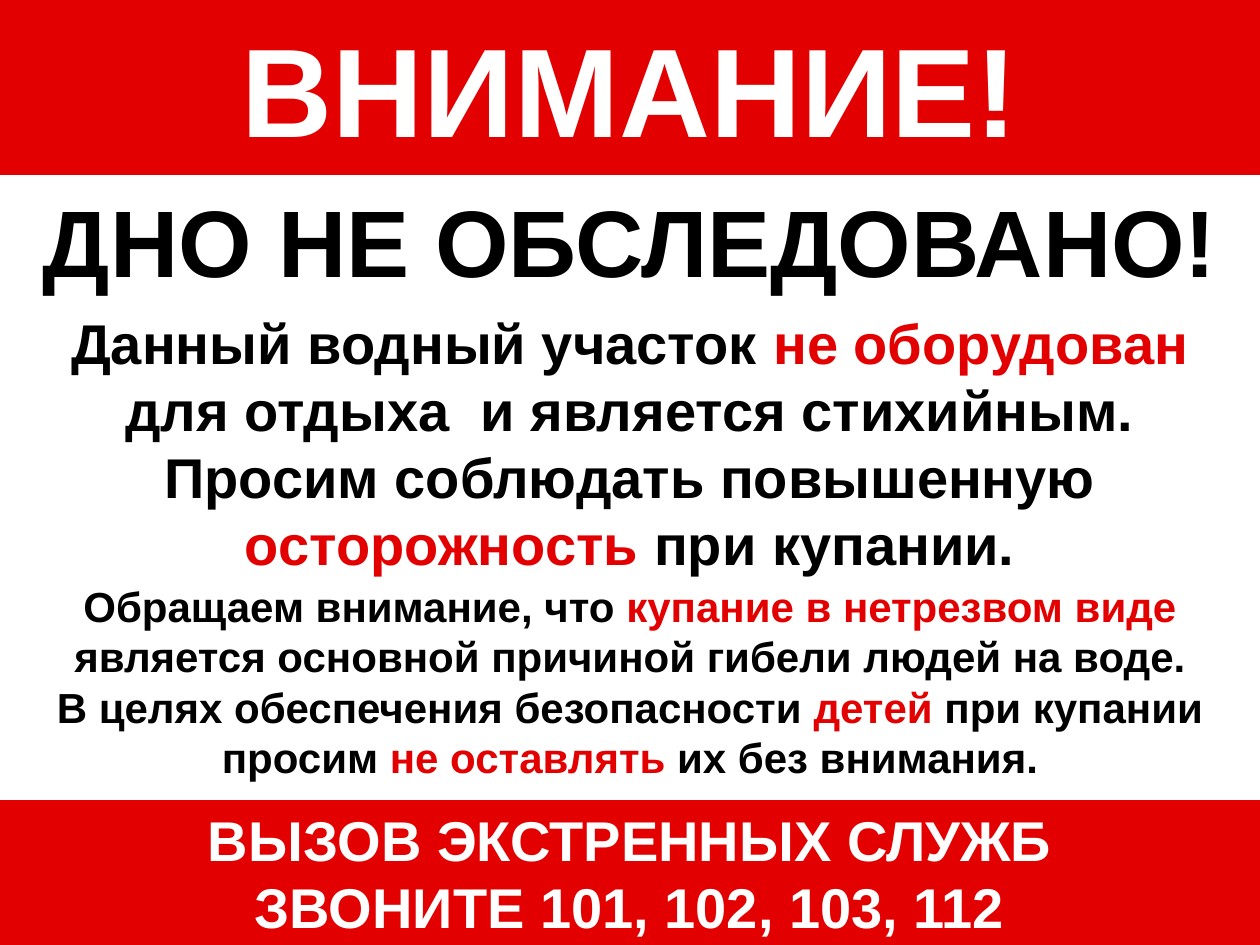
from pptx import Presentation
from pptx.dml.color import RGBColor
from pptx.enum.shapes import MSO_SHAPE as Shape
from pptx.enum.text import MSO_ANCHOR as Anchor, MSO_AUTO_SIZE as AutoSize, PP_ALIGN as Align
from pptx.util import Emu, Pt

PX = 914400 / 126
WIDTH, HEIGHT = 1260, 945
COLORS = {"red": "E20000", "black": "000000", "white": "FFFFFF"}

WARNING = [[
    ("Данный водный участок ", "black"),
    ("не оборудован ", "red"),
    ("для отдыха  и является стихийным. Просим соблюдать повышенную ", "black"),
    ("осторожность", "red"),
    (" при купании.", "black"),
]]
ADVICE = [
    [("Обращаем внимание, что ", "black"),
     ("купание в нетрезвом виде ", "red"),
     ("является основной причиной гибели людей на воде.", "black")],
    [("В целях обеспечения безопасности ", "black"),
     ("детей ", "red"),
     ("при купании", "black")],
    [("просим ", "black"),
     ("не оставлять ", "red"),
     ("их без внимания.", "black")],
]
CONTACTS = [
    [("ВЫЗОВ ЭКСТРЕННЫХ СЛУЖБ", "white")],
    [("ЗВОНИТЕ 101, 102, 103, 112", "white")],
]


def px(length):
    return Emu(round(length * PX))


def color(name):
    return RGBColor.from_string(COLORS[name])


def full_width(top, height):
    return px(0), px(top), px(WIDTH), px(height)


def write(shape, lines, size):
    """Fill a shape with centred bold lines, each a list of (text, color name)."""
    frame = shape.text_frame
    frame.word_wrap = True
    frame.auto_size = AutoSize.NONE
    frame.vertical_anchor = Anchor.MIDDLE
    for index, line in enumerate(lines):
        para = frame.add_paragraph() if index else frame.paragraphs[0]
        para.alignment = Align.CENTER
        para.font.name = "Arial"
        para.font.size = Pt(size)
        para.font.bold = True
        for text, name in line:
            span = para.add_run()
            span.text = text
            span.font.color.rgb = color(name)


def paint_red(shape):
    shape.fill.solid()
    shape.fill.fore_color.rgb = color("red")
    shape.line.fill.background()


def title_band(page, top, height):
    title = page.shapes.title
    title.left, title.top, title.width, title.height = full_width(top, height)
    paint_red(title)
    write(title, [[("ВНИМАНИЕ!", "white")]], 72)


def text_block(page, top, height, lines, size):
    write(page.shapes.add_textbox(*full_width(top, height)), lines, size)


def contact_band(page, top, height):
    band = page.shapes.add_shape(Shape.RECTANGLE, *full_width(top, height))
    band.shadow.inherit = False
    paint_red(band)
    write(band, CONTACTS, 32)


def main():
    deck = Presentation()
    deck.slide_width, deck.slide_height = px(WIDTH), px(HEIGHT)
    page = deck.slides.add_slide(deck.slide_layouts[5])
    title_band(page, 0, 175)
    text_block(page, 175, 129, [[("ДНО НЕ ОБСЛЕДОВАНО!", "black")]], 54)
    text_block(page, 304, 277, WARNING, 32)
    contact_band(page, 800, HEIGHT - 800)
    text_block(page, 572, 218, ADVICE, 24)
    deck.save("out.pptx")


if __name__ == "__main__":
    main()
